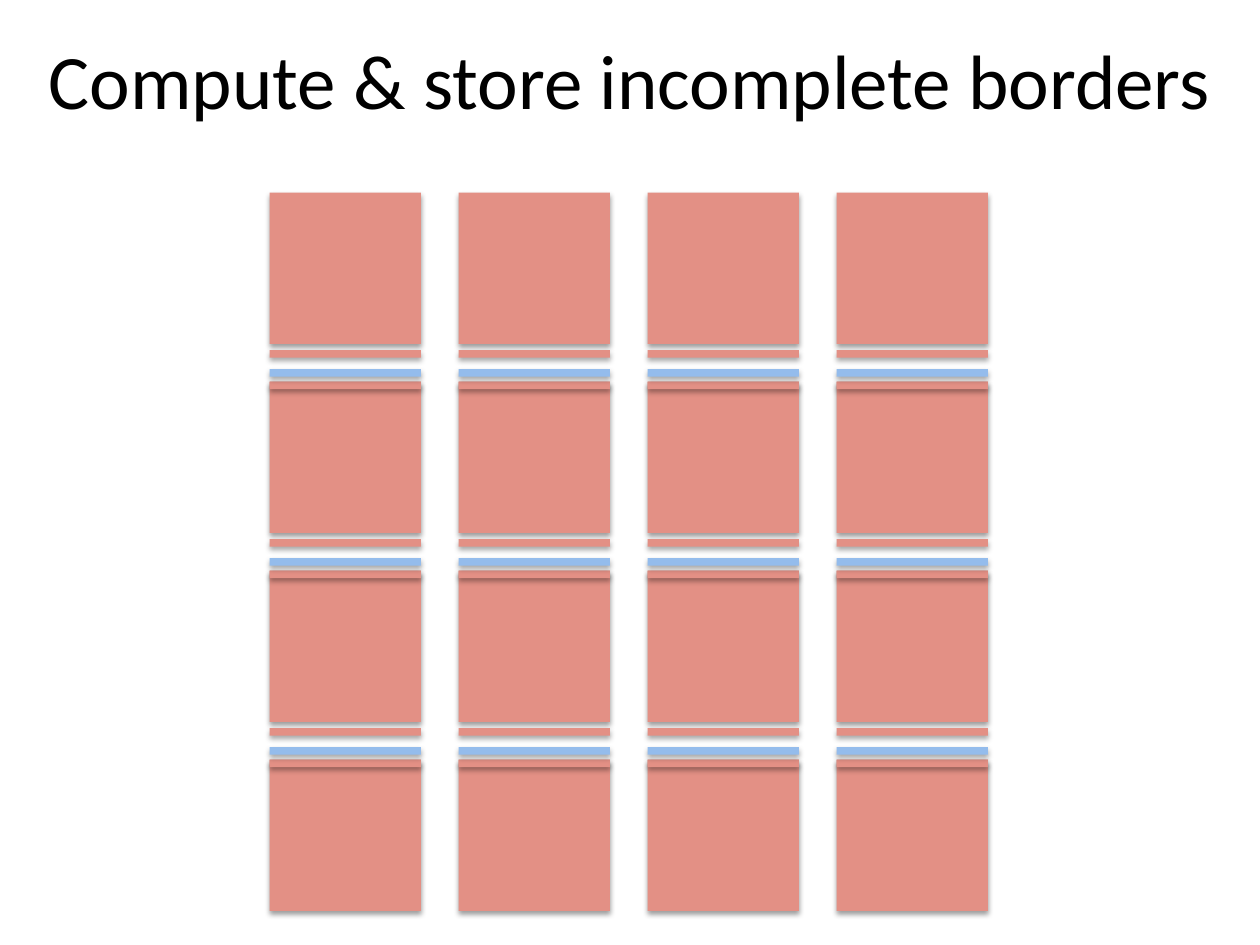
from dataclasses import dataclass
from itertools import product

from lxml.etree import SubElement as Sub
from pptx import Presentation
from pptx.dml.color import RGBColor as Rgb
from pptx.enum.shapes import MSO_SHAPE as Kind
from pptx.enum.text import MSO_ANCHOR as Anchor, PP_ALIGN as Align
from pptx.oxml.ns import qn
from pptx.util import Inches, Pt


@dataclass(frozen=True)
class Theme:
    font: str = "Calibri"
    size: int = 44
    ink: str = "000000"
    red: str = "E39085"
    blue: str = "94BCEC"
    blur: float = 3.1


theme = Theme()
TITLE = "Compute & store incomplete borders"
COLS, SIDE, THIN, PITCH = 4, 1.2, 0.06, 1.5
LEFT = 2.14

# Each layer: rows, top of first row, thickness, fill, shadow opacity %, shadow offset pt
LAYERS = [
    (4, 1.53, SIDE, theme.red, 38, 1.6),  # tiles
    (3, 3.03, THIN, theme.red, 35, 1.8),  # upper borders
    (3, 2.78, THIN, theme.red, 35, 1.8),  # lower borders
    (3, 2.93, THIN, theme.blue, 35, 1.8),  # stored borders
]


def add_title(slide):
    box = slide.shapes.add_textbox(0, 0, Inches(10), Inches(1.25))
    frame = box.text_frame
    frame.word_wrap = True
    frame.vertical_anchor = Anchor.MIDDLE
    para = frame.paragraphs[0]
    para.alignment = Align.CENTER
    run = para.add_run()
    run.text = TITLE
    run.font.name = theme.font
    run.font.size = Pt(theme.size)
    run.font.color.rgb = Rgb.from_string(theme.ink)


def add_shadow(shape, alpha, dist):
    shape.shadow.inherit = False
    effects = shape._element.spPr.find(qn("a:effectLst"))
    outer = Sub(effects, qn("a:outerShdw"), blurRad=str(Pt(theme.blur)),
                dist=str(Pt(dist)), dir="5400000", rotWithShape="0")
    color = Sub(outer, qn("a:srgbClr"), val=theme.ink)
    Sub(color, qn("a:alpha"), val=str(alpha * 1000))


def add_bar(group, left, top, thick, fill, alpha, dist):
    """Draw an upright bar, then turn it a quarter about its centre."""
    shift = (SIDE - thick) / 2
    bar = group.shapes.add_shape(
        Kind.RECTANGLE, Inches(left + shift), Inches(top - shift),
        Inches(thick), Inches(SIDE))
    bar.rotation = 90
    bar.fill.solid()
    bar.fill.fore_color.rgb = Rgb.from_string(fill)
    bar.line.fill.background()
    add_shadow(bar, alpha, dist)


def main():
    deck = Presentation()
    deck.slide_width, deck.slide_height = Inches(10), Inches(7.5)
    slide = deck.slides.add_slide(deck.slide_layouts[6])
    add_title(slide)
    for rows, top, *style in LAYERS:
        group = slide.shapes.add_group_shape()
        for row, col in product(range(rows), range(COLS)):
            add_bar(group, LEFT + col * PITCH, top + row * PITCH, *style)
    deck.save("out.pptx")


if __name__ == "__main__":
    main()
